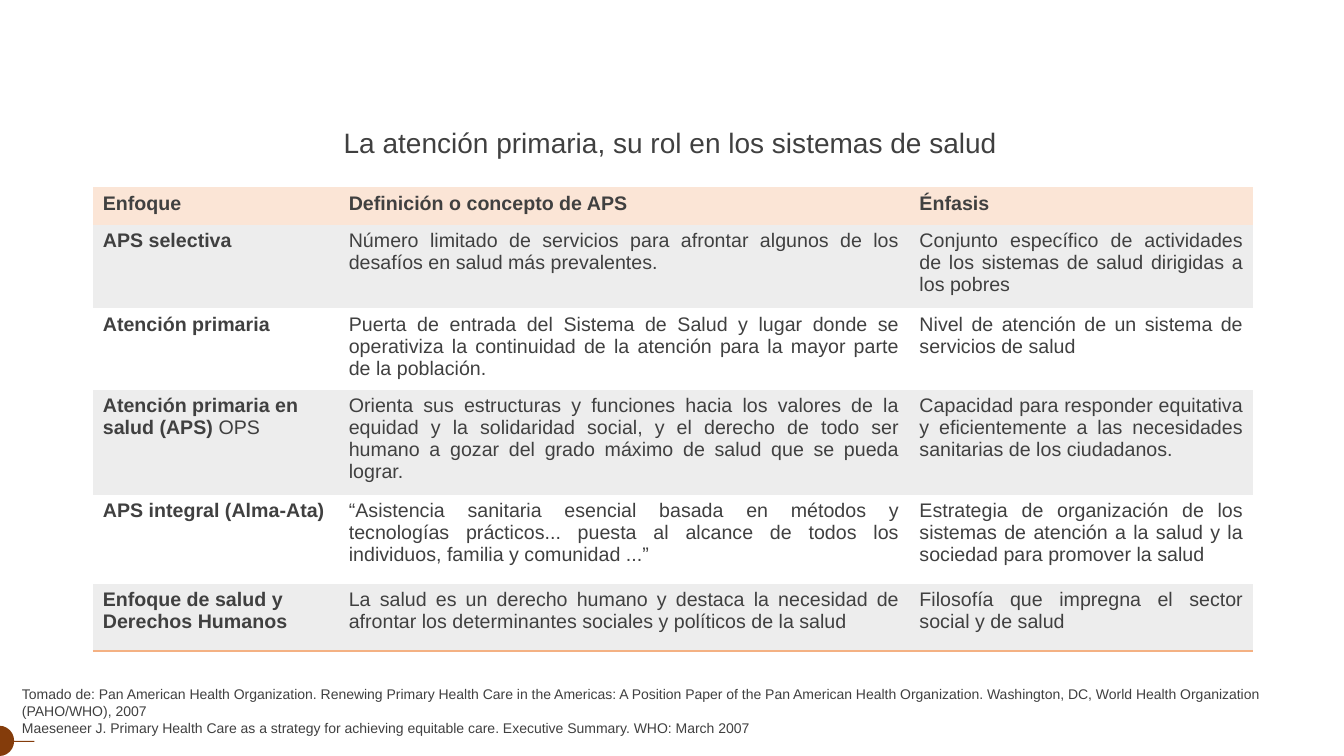
from lxml.etree import SubElement
from pptx import Presentation
from pptx.dml.color import RGBColor
from pptx.enum.shapes import MSO_SHAPE
from pptx.enum.text import MSO_ANCHOR, MSO_AUTO_SIZE, PP_ALIGN
from pptx.oxml.ns import qn
from pptx.util import Inches, Pt

TEXT = RGBColor(0x40, 0x40, 0x40)
HEADER = RGBColor(0xFB, 0xE5, 0xD6)
BAND = RGBColor(0xED, 0xED, 0xED)
RULE = RGBColor(0xF4, 0xB1, 0x83)
ACCENT = RGBColor(0x84, 0x3C, 0x0B)
FONT = "Arial"

TITLE = "La atención primaria, su rol en los sistemas de salud"
SOURCES = [
    "Tomado de: Pan American Health Organization. Renewing Primary Health Care in the Americas: "
    "A Position Paper of the Pan American Health Organization. Washington, DC, "
    "World Health Organization (PAHO/WHO), 2007",
    "Maeseneer J. Primary Health Care as a strategy for achieving equitable care. "
    "Executive Summary. WHO: March 2007",
]
COLUMN_WIDTHS = [2.44, 5.66, 3.41]
ROW_HEIGHTS = [0.37, 0.83, 0.81, 1.04, 0.88, 0.67]
APPROACHES = [
    ("Enfoque", "Definición o concepto de APS", "Énfasis"),
    ("APS selectiva",
     "Número limitado de servicios para afrontar algunos de los desafíos en salud más prevalentes.",
     "Conjunto específico de actividades de los sistemas de salud dirigidas a los pobres"),
    ("Atención primaria",
     "Puerta de entrada del Sistema de Salud y lugar donde se operativiza la continuidad "
     "de la atención para la mayor parte de la población.",
     "Nivel de atención de un sistema de servicios de salud"),
    ("Atención primaria en salud (APS) ",
     "Orienta sus estructuras y funciones hacia los valores de la equidad y la solidaridad social, "
     "y el derecho de todo ser humano a gozar del grado máximo de salud que se pueda lograr.",
     "Capacidad para responder equitativa y eficientemente a las necesidades sanitarias "
     "de los ciudadanos."),
    ("APS integral (Alma-Ata)",
     "“Asistencia sanitaria esencial basada en métodos y tecnologías prácticos... "
     "puesta al alcance de todos los individuos, familia y comunidad ...”",
     "Estrategia de organización de los sistemas de atención a la salud y la sociedad "
     "para promover la salud"),
    ("Enfoque de salud y Derechos Humanos",
     "La salud es un derecho humano y destaca la necesidad de afrontar los determinantes "
     "sociales y políticos de la salud",
     "Filosofía que impregna el sector social y de salud"),
]
APS_ROW = 3


def style_run(run, size, bold=False):
    run.font.name = FONT
    run.font.size = Pt(size)
    run.font.bold = bold
    run.font.color.rgb = TEXT


def add_text(slide, left, top, width, height, lines, size, wrap=True, anchor=MSO_ANCHOR.TOP):
    box = slide.shapes.add_textbox(Inches(left), Inches(top), Inches(width), Inches(height))
    frame = box.text_frame
    frame.word_wrap = wrap
    frame.auto_size = MSO_AUTO_SIZE.SHAPE_TO_FIT_TEXT
    frame.vertical_anchor = anchor
    frame.text = "\n".join(lines)
    for paragraph in frame.paragraphs:
        style_run(paragraph.runs[0], size)


def set_borders(cell, bottom_ruled):
    properties = cell._tc.get_or_add_tcPr()
    for side in ("lnL", "lnR", "lnT", "lnB"):
        border = SubElement(properties, qn(f"a:{side}"), w=str(Pt(1)))
        if side == "lnB" and bottom_ruled:
            solid = SubElement(border, qn("a:solidFill"))
            SubElement(solid, qn("a:srgbClr"), val=str(RULE))
        else:
            SubElement(border, qn("a:noFill"))


def fill_cell(cell, text, row, column):
    set_borders(cell, row == len(APPROACHES) - 1)
    if row == 0 or row % 2:
        cell.fill.solid()
        cell.fill.fore_color.rgb = BAND if row else HEADER
    else:
        cell.fill.background()
    paragraph = cell.text_frame.paragraphs[0]
    paragraph.text = text
    style_run(paragraph.runs[0], 14, bold=row == 0 or column == 0)
    if row and column:
        paragraph.alignment = PP_ALIGN.JUSTIFY


def add_approach_table(slide):
    table = slide.shapes.add_table(
        len(APPROACHES), len(COLUMN_WIDTHS), Inches(0.92), Inches(1.86),
        Inches(sum(COLUMN_WIDTHS)), Inches(sum(ROW_HEIGHTS))).table
    table.horz_banding = False
    for column, width in zip(table.columns, COLUMN_WIDTHS):
        column.width = Inches(width)
    for row, height in zip(table.rows, ROW_HEIGHTS):
        row.height = Inches(height)
    for row, texts in enumerate(APPROACHES):
        for column, text in enumerate(texts):
            fill_cell(table.cell(row, column), text, row, column)
    agency = table.cell(APS_ROW, 0).text_frame.paragraphs[0].add_run()
    agency.text = "OPS"
    style_run(agency, 14)


def add_accent(group, preset, left, top, width, height):
    accent = group.shapes.add_shape(
        preset, Inches(left), Inches(top), Inches(width), Inches(height))
    accent.shadow.inherit = False
    accent.fill.solid()
    accent.fill.fore_color.rgb = ACCENT
    accent.line.fill.background()
    return accent


def add_corner_mark(slide):
    corner = slide.shapes.add_group_shape()
    add_accent(corner, MSO_SHAPE.RECTANGLE, 0.02, 7.35, 0.32, 0.01)
    half_disc = add_accent(corner, MSO_SHAPE.PIE, -0.15, 7.2, 0.29, 0.3)
    half_disc.rotation = 180
    half_disc.adjustments[0] = 54
    half_disc.adjustments[1] = 162


def main():
    presentation = Presentation()
    presentation.slide_width = Inches(13.33)
    presentation.slide_height = Inches(7.5)
    slide = presentation.slides.add_slide(presentation.slide_layouts[6])
    add_approach_table(slide)
    add_text(slide, 0.12, 6.75, 13.33, 0.61, SOURCES, 10, anchor=MSO_ANCHOR.MIDDLE)
    add_text(slide, 3.31, 1.2, 6.81, 0.44, [TITLE], 20, wrap=False)
    add_corner_mark(slide)
    presentation.save("out.pptx")


if __name__ == "__main__":
    main()
